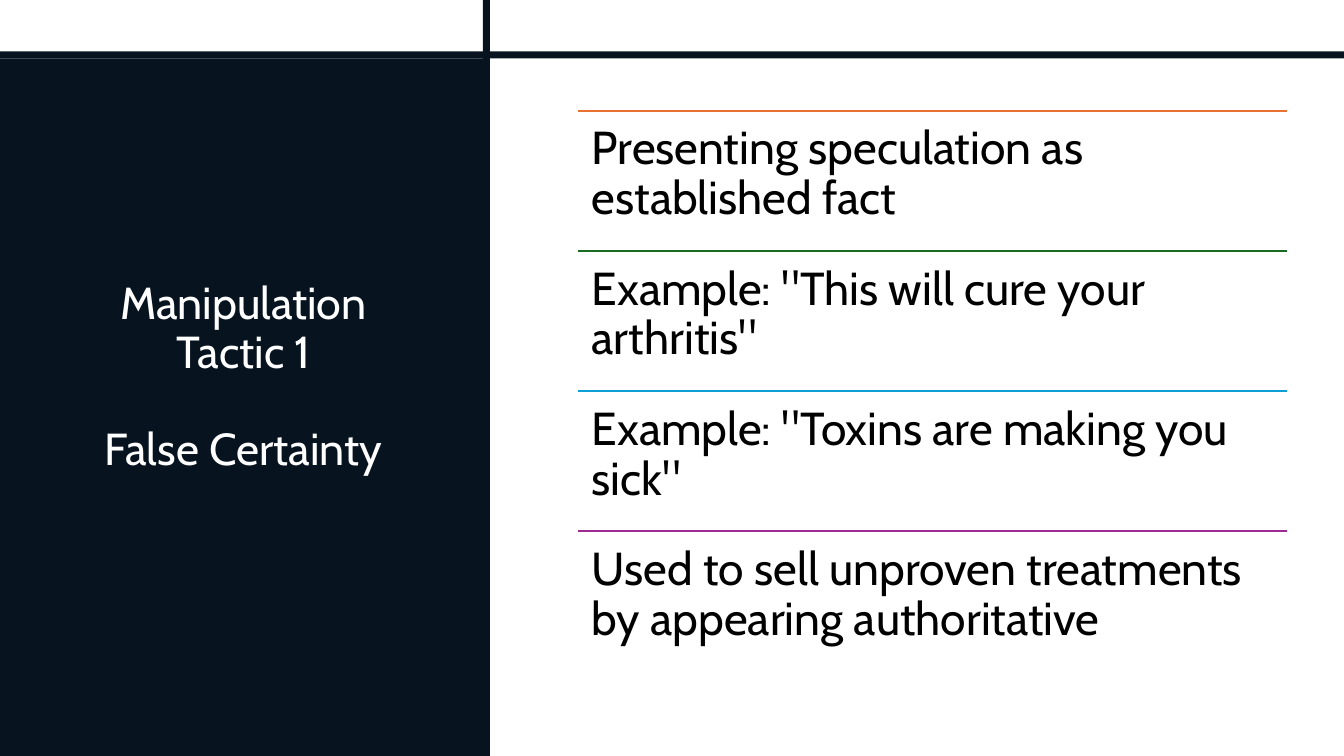
"""Build a slide with a dark title panel and four ruled statements."""
from lxml import etree
from pptx import Presentation
from pptx.dml.color import RGBColor
from pptx.enum import shapes, text
from pptx.oxml import ns
from pptx.util import Inches, Pt

FONT = "Cabin"
NAVY, WHITE, BLACK = "071420", "FFFFFF", "000000"
TITLE = ["Manipulation Tactic 1", "False Certainty"]
STATEMENTS = [
    ("Presenting speculation as established fact", "E97132"),
    ('Example: "This will cure your arthritis"', "196B24"),
    ('Example: "Toxins are making you sick"', "0F9ED5"),
    ("Used to sell unproven treatments by appearing authoritative", "A02B93"),
]
PANEL = (0, 0.58, 4.86, 6.92)
VERTICAL_BAR = (4.79, 0, 0.07, 7.5)
HORIZONTAL_BAR = (0, 0.51, 13.33, 0.07)
TITLE_BOX = (0.66, 0.84, 3.51, 5.82)
LIST_LEFT, LIST_TOP, LIST_WIDTH, ROW_HEIGHT = 5.73, 1.1, 7.03, 1.39
INSET = 0.14


def color(value):
    return RGBColor.from_string(value)


def inches(values):
    return [Inches(value) for value in values]


def style(para, size, value):
    para.font.name = FONT
    para.font.size = Pt(size)
    para.font.color.rgb = color(value)
    para.line_spacing = 0.9


def add_block(page, bounds):
    block = page.shapes.add_shape(shapes.MSO_SHAPE.RECTANGLE, *inches(bounds))
    block.shadow.inherit = False
    block.fill.solid()
    block.fill.fore_color.rgb = color(NAVY)
    block.line.fill.background()
    return block


def place_title(page, panel):
    title = page.shapes.title
    title.left, title.top, title.width, title.height = inches(TITLE_BOX)
    panel.element.addnext(title.element)
    frame = title.text_frame
    frame.text = "\n".join(TITLE)
    frame.word_wrap = True
    frame.auto_size = text.MSO_AUTO_SIZE.NONE
    frame.vertical_anchor = text.MSO_ANCHOR.MIDDLE
    for para in frame.paragraphs:
        style(para, 32, WHITE)
        para.alignment = text.PP_ALIGN.CENTER
    frame.paragraphs[-1].space_before = Pt(35)


def add_statement(page, top, words, rule_color):
    rule = page.shapes.add_connector(
        shapes.MSO_CONNECTOR.STRAIGHT,
        *inches((LIST_LEFT, top, LIST_LEFT + LIST_WIDTH, top)))
    rule.line.color.rgb = color(rule_color)
    rule.line.width = Pt(1.5)
    etree.SubElement(rule.element.spPr, ns.qn("a:effectLst"))

    box = page.shapes.add_textbox(
        *inches((LIST_LEFT, top, LIST_WIDTH, ROW_HEIGHT)))
    frame = box.text_frame
    frame.word_wrap = True
    frame.margin_left = frame.margin_right = Inches(INSET)
    frame.margin_top = frame.margin_bottom = Inches(INSET)
    frame.text = words
    style(frame.paragraphs[0], 33, BLACK)


def main():
    deck = Presentation()
    deck.slide_width, deck.slide_height = inches((13.33, 7.5))
    page = deck.slides.add_slide(deck.slide_layouts[5])
    panel = add_block(page, PANEL)
    place_title(page, panel)
    for bar in (VERTICAL_BAR, HORIZONTAL_BAR):
        add_block(page, bar)
    for row, (words, rule_color) in enumerate(STATEMENTS):
        add_statement(page, LIST_TOP + row * ROW_HEIGHT, words, rule_color)
    deck.save("out.pptx")


if __name__ == "__main__":
    main()
